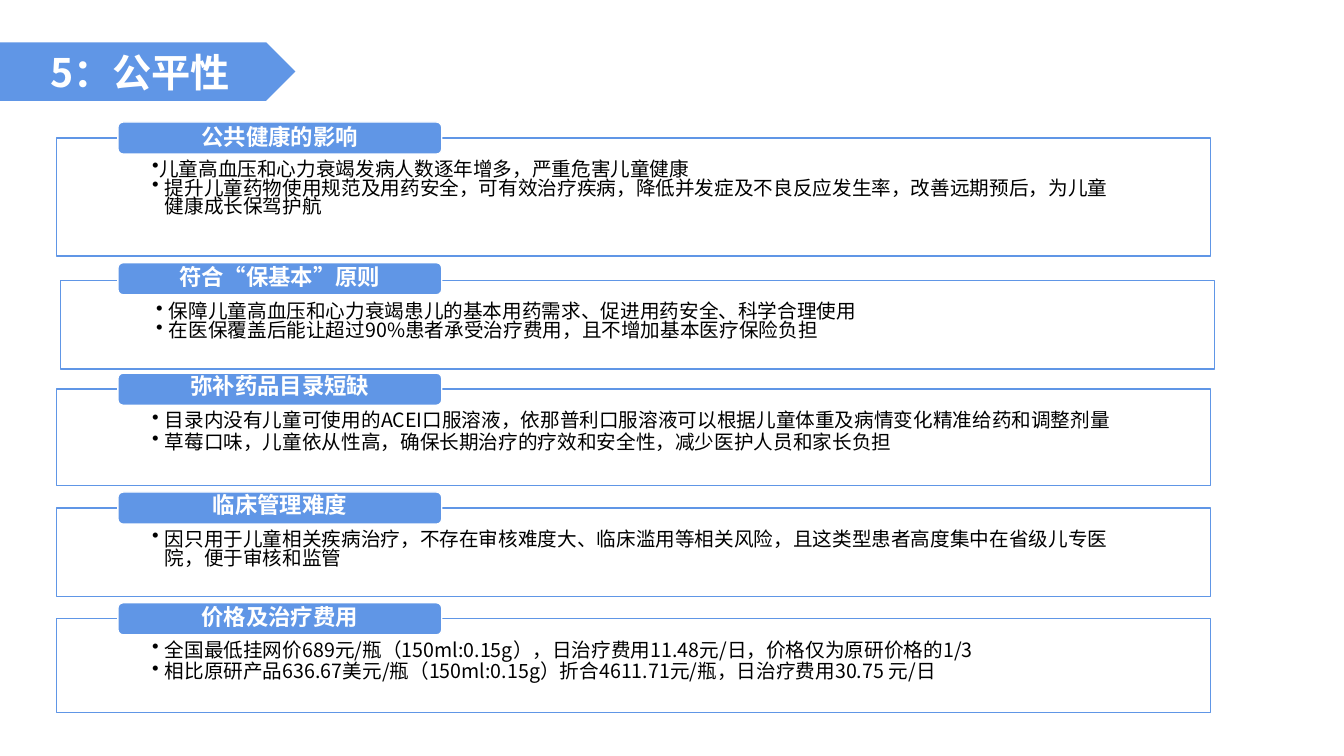
"""Build the fairness slide: an arrow title and five labelled panels."""
from dataclasses import dataclass

from pptx import Presentation
from pptx.dml.color import RGBColor as Rgb
from pptx.enum.shapes import MSO_SHAPE as Preset
from pptx.enum.text import MSO_ANCHOR as Anchor, PP_ALIGN as Align
from pptx.oxml.ns import qn
from pptx.util import Pt

TITLE = "5：公平性"
SECTIONS = [
    dict(label="公共健康的影响", left=40.3, top=98.6, height=84.2, rise=11.5,
         label_spacing=0.9, gap=0, hangs=(0, 9), points=[
             "儿童高血压和心力衰竭发病人数逐年增多，严重危害儿童健康",
             "提升儿童药物使用规范及用药安全，可有效治疗疾病，降低并发症及不良反应发生率，"
             "改善远期预后，为儿童健康成长保驾护航"]),
    dict(label="符合“保基本”原则", left=43.2, top=200.2, height=63.4, rise=12.6,
         label_spacing=0.9, gap=0, hangs=(9, 9), points=[
             "保障儿童高血压和心力衰竭患儿的基本用药需求、促进用药安全、科学合理使用",
             "在医保覆盖后能让超过90%患者承受治疗费用，且不增加基本医疗保险负担"]),
    dict(label="弥补药品目录短缺", left=40.3, top=278, height=68.7, rise=11.5,
         label_spacing=0.7, gap=2, hangs=(9, 9), points=[
             "目录内没有儿童可使用的ACEI口服溶液，依那普利口服溶液可以根据儿童体重及病情"
             "变化精准给药和调整剂量",
             "草莓口味，儿童依从性高，确保长期治疗的疗效和安全性，减少医护人员和家长负担"]),
    dict(label="临床管理难度", left=40.3, top=362.9, height=63.4, rise=11.5,
         label_spacing=0.7, gap=0, hangs=(9,), points=[
             "因只用于儿童相关疾病治疗，不存在审核难度大、临床滥用等相关风险，"
             "且这类型患者高度集中在省级儿专医院，便于审核和监管"]),
    dict(label="价格及治疗费用", left=40.3, top=442, height=67, rise=11.5,
         label_spacing=0.8, gap=2, hangs=(9, 9), points=[
             "全国最低挂网价689元/瓶（150ml:0.15g），日治疗费用11.48元/日，价格仅为原研价格的1/3",
             "相比原研产品636.67美元/瓶（150ml:0.15g）折合4611.71元/瓶，日治疗费用30.75 元/日"]),
]
PANEL_WIDTH = 824.4
LABEL_LEFT, LABEL_WIDTH, LABEL_HEIGHT = 84.2, 231.4, 23
PANEL_INSETS = (68.4, 16.6, 68.4, 8)
LABEL_INSETS = (23, 0, 23, 0)


@dataclass(frozen=True)
class Theme:
    """Colours, font and type sizes of the slide."""
    blue: Rgb = Rgb(0x60, 0x96, 0xE6)
    white: Rgb = Rgb(0xFF, 0xFF, 0xFF)
    black: Rgb = Rgb(0, 0, 0)
    font: str = "Noto Sans CJK SC"
    title: int = 28
    label: int = 16
    body: int = 14


THEME = Theme()


def add_box(page, preset, area, fill, line=None):
    """Add a flat filled shape at an area given in points."""
    box = page.shapes.add_shape(preset, *map(Pt, area))
    box.shadow.inherit = False
    box.fill.solid()
    box.fill.fore_color.rgb = fill
    if line is None:
        box.line.fill.background()
    else:
        box.line.color.rgb = line
        box.line.width = Pt(1)
    return box


def set_frame(frame, insets, anchor):
    """Set wrapping, insets and vertical anchor of a text frame."""
    frame.word_wrap = True
    frame.vertical_anchor = anchor
    frame.margin_left, frame.margin_top, frame.margin_right, frame.margin_bottom = map(Pt, insets)


def style_para(para, size, color, bold, align, spacing=1.0, gap=0):
    """Format a paragraph, with the font for Latin and East Asian text."""
    para.alignment, para.line_spacing = align, spacing
    para.space_before, para.space_after = Pt(0), Pt(gap)
    font = para.font
    font.name, font.size, font.bold = THEME.font, Pt(size), bold
    font.color.rgb = color
    default = para._p.get_or_add_pPr().find(qn("a:defRPr"))
    east_asian = default.makeelement(qn("a:ea"), {"typeface": THEME.font})
    default.find(qn("a:latin")).addnext(east_asian)


def add_bullet(para, hang):
    """Give a paragraph a round bullet and a hanging indent."""
    props = para._p.get_or_add_pPr()
    props.set("marL", str(Pt(hang)))
    props.set("indent", str(Pt(-9)))
    bullet = props.makeelement(qn("a:buChar"), {"char": "•"})
    props.find(qn("a:defRPr")).addprevious(bullet)


def add_title(page):
    """Place the title placeholder on a blue arrow."""
    arrow = add_box(page, Preset.PENTAGON, (0, 30.2, 211, 41.8), THEME.blue)
    title = page.shapes.title
    title.left, title.top, title.width, title.height = map(Pt, (0, 30.2, 200, 41.8))
    arrow.element.addnext(title.element)
    set_frame(title.text_frame, (0, 0, 0, 0), Anchor.MIDDLE)
    title.text_frame.text = TITLE
    style_para(title.text_frame.paragraphs[0], THEME.title, THEME.white, True, Align.CENTER)


def add_section(page, section):
    """Add a panel of bullet points with its label on the top edge."""
    panel = add_box(page, Preset.RECTANGLE,
                    (section["left"], section["top"], PANEL_WIDTH, section["height"]),
                    THEME.white, THEME.blue)
    set_frame(panel.text_frame, PANEL_INSETS, Anchor.TOP)
    panel.text_frame.text = "\n".join(section["points"])
    for para, hang in zip(panel.text_frame.paragraphs, section["hangs"]):
        style_para(para, THEME.body, THEME.black, False, Align.LEFT, 0.8, section["gap"])
        add_bullet(para, hang)

    label = add_box(page, Preset.ROUNDED_RECTANGLE,
                    (LABEL_LEFT, section["top"] - section["rise"], LABEL_WIDTH, LABEL_HEIGHT),
                    THEME.blue, THEME.white)
    set_frame(label.text_frame, LABEL_INSETS, Anchor.MIDDLE)
    label.text_frame.text = section["label"]
    style_para(label.text_frame.paragraphs[0], THEME.label, THEME.white, True,
               Align.CENTER, section["label_spacing"])


def main():
    """Build and save the deck."""
    deck = Presentation()
    deck.slide_width, deck.slide_height = Pt(960), Pt(540)
    page = deck.slides.add_slide(deck.slide_layouts[5])
    add_title(page)
    for section in SECTIONS:
        add_section(page, section)
    deck.save("out.pptx")


if __name__ == "__main__":
    main()
